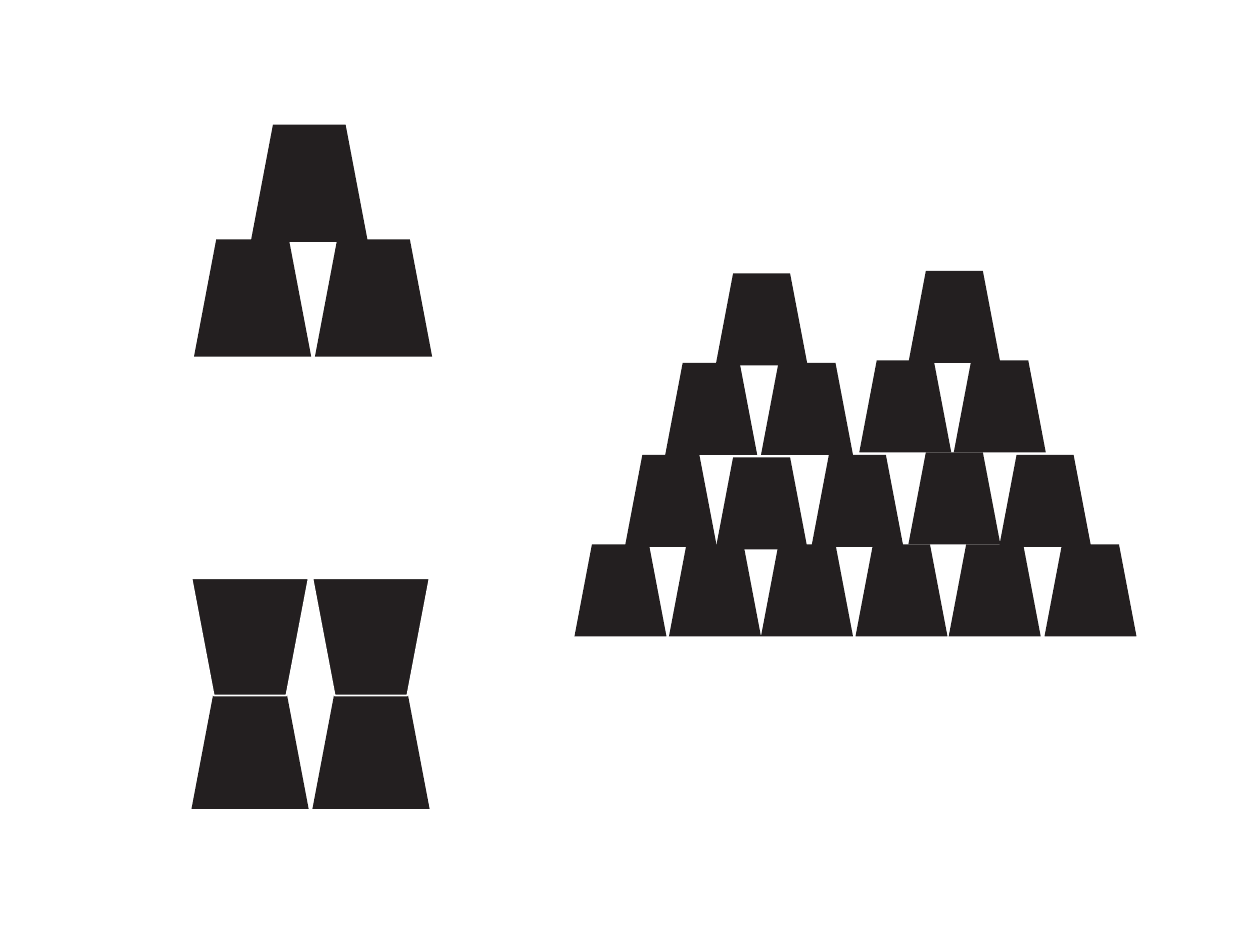
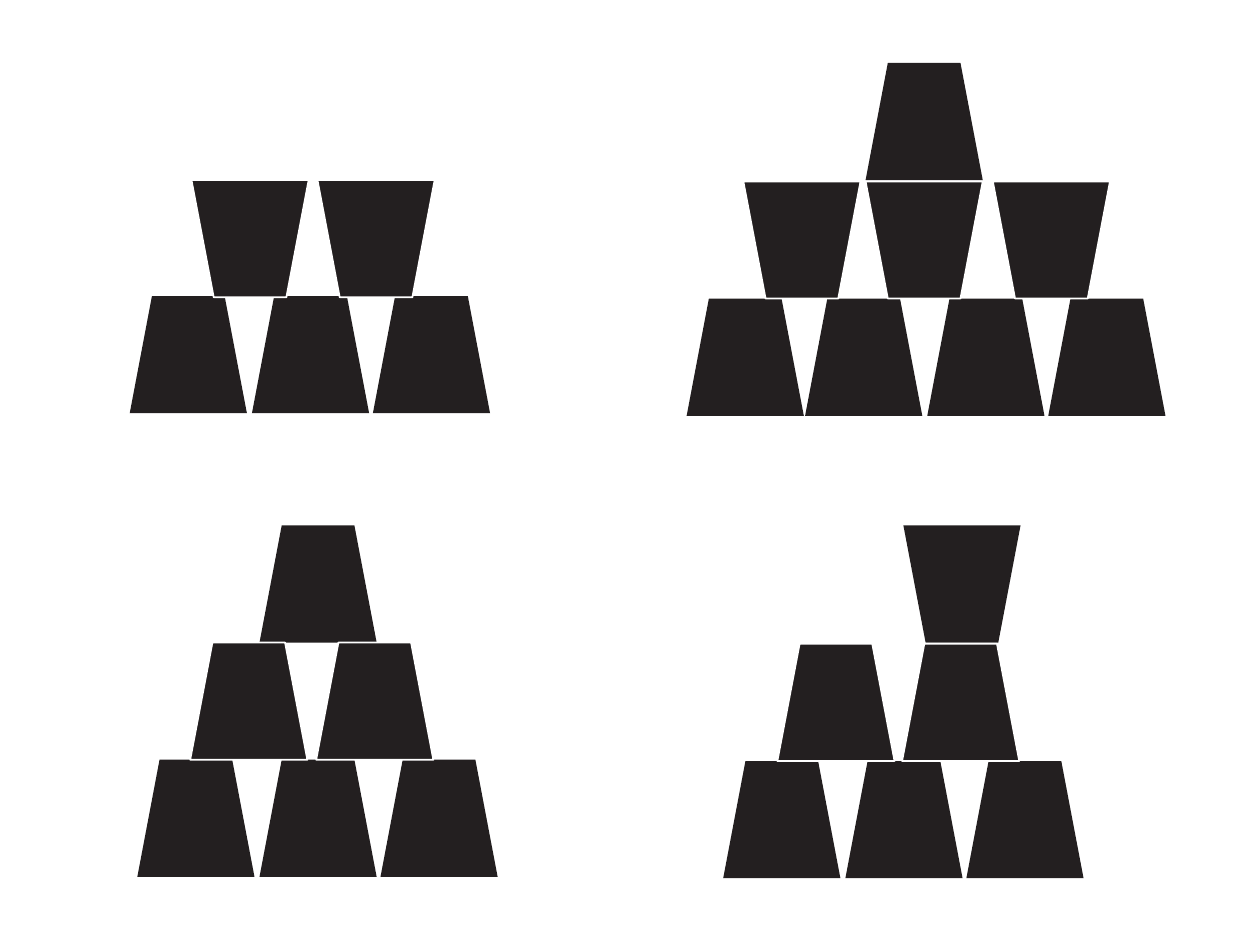
from dataclasses import dataclass

from pptx import Presentation
from pptx.dml.color import RGBColor
from pptx.util import Inches, Pt

BLANK_LAYOUT = 6


@dataclass(frozen=True)
class Theme:
    cup_fill: RGBColor = RGBColor(0x23, 0x1F, 0x20)
    rim: RGBColor = RGBColor(0xFF, 0xFF, 0xFF)
    rim_width: int = 1       # points
    large_cup: float = 0.93  # inches, width and height
    small_cup: float = 0.73
    taper: float = 0.19      # narrowing on each side, as a share of the width


@dataclass(frozen=True)
class Row:
    """Cups standing side by side at one height, in inches."""
    top: float
    lefts: tuple
    inverted: bool = False
    rimmed: bool = False


class CupDeck:
    def __init__(self, theme):
        self.theme = theme
        self.deck = Presentation()
        self.deck.slide_width = Inches(10)
        self.deck.slide_height = Inches(7.5)
        self.slide = None

    def new_slide(self):
        layout = self.deck.slide_layouts[BLANK_LAYOUT]
        self.slide = self.deck.slides.add_slide(layout)

    def cup(self, shapes, left, row, size):
        """Draw one trapezoid cup, with its mouth down unless inverted."""
        right, bottom = left + size, row.top + size
        inset = size * self.theme.taper
        mouth_y, foot_y = (row.top, bottom) if row.inverted else (bottom, row.top)
        corners = [(right, mouth_y), (right - inset, foot_y),
                   (left + inset, foot_y), (left, mouth_y)]
        start, *others = [(Inches(x), Inches(y)) for x, y in corners]
        outline = shapes.build_freeform(*start)
        outline.add_line_segments(others, close=True)
        cup = outline.convert_to_shape()
        cup.shadow.inherit = False
        cup.fill.solid()
        cup.fill.fore_color.rgb = self.theme.cup_fill
        if row.rimmed:
            cup.line.color.rgb = self.theme.rim
            cup.line.width = Pt(self.theme.rim_width)
        else:
            cup.line.fill.background()

    def stack(self, rows, size=None):
        """Draw rows of cups as one group, from back to front."""
        shapes = self.slide.shapes.add_group_shape().shapes
        for row in rows:
            for left in row.lefts:
                self.cup(shapes, left, row, size or self.theme.large_cup)

    def save(self):
        self.deck.save("out.pptx")


def draw_first_slide(cups):
    cups.new_slide()

    # Two mirrored pairs
    cups.stack([
        Row(5.49, (2.48, 1.52)),
        Row(4.59, (2.48, 1.52), inverted=True, rimmed=True),
    ])

    # Three-cup pyramid
    cups.stack([
        Row(1.9, (2.5, 1.54)),
        Row(0.99, (1.99,)),
    ])

    # Castle with two towers
    cups.stack([
        Row(4.32, (4.56, 5.31, 6.04, 6.79, 7.53, 8.29)),
        Row(3.61, (4.96, 6.44, 7.93)),
        Row(3.63, (5.68,)),
        Row(3.59, (7.21,)),
        Row(2.88, (5.28, 6.04)),
        Row(2.86, (6.82, 7.57)),
        Row(2.17, (5.68,)),
        Row(2.15, (7.21,)),
    ], cups.theme.small_cup)


def draw_second_slide(cups):
    cups.new_slide()

    # Two inverted cups on three
    cups.stack([
        Row(2.35, (1.03, 2, 2.96)),
        Row(1.43, (2.52, 1.52), inverted=True, rimmed=True),
    ])

    # Six-cup pyramid
    cups.stack([
        Row(6.03, (1.09, 2.06, 3.02)),
        Row(4.17, (2.06,)),
        Row(5.1, (2.51, 1.51), rimmed=True),
    ])

    # Pyramid with an inverted cup on the right
    cups.stack([
        Row(6.04, (5.74, 6.71, 7.67)),
        Row(4.17, (7.17,), inverted=True),
        Row(5.11, (7.16, 6.17), rimmed=True),
    ])

    # Inverted middle row under a single cup
    cups.stack([
        Row(2.37, (5.45, 6.39, 7.36, 8.32)),
        Row(1.44, (7.88, 6.87, 5.9), inverted=True, rimmed=True),
        Row(0.5, (6.87,)),
    ])


def main():
    cups = CupDeck(Theme())
    draw_first_slide(cups)
    draw_second_slide(cups)
    cups.save()


if __name__ == "__main__":
    main()
